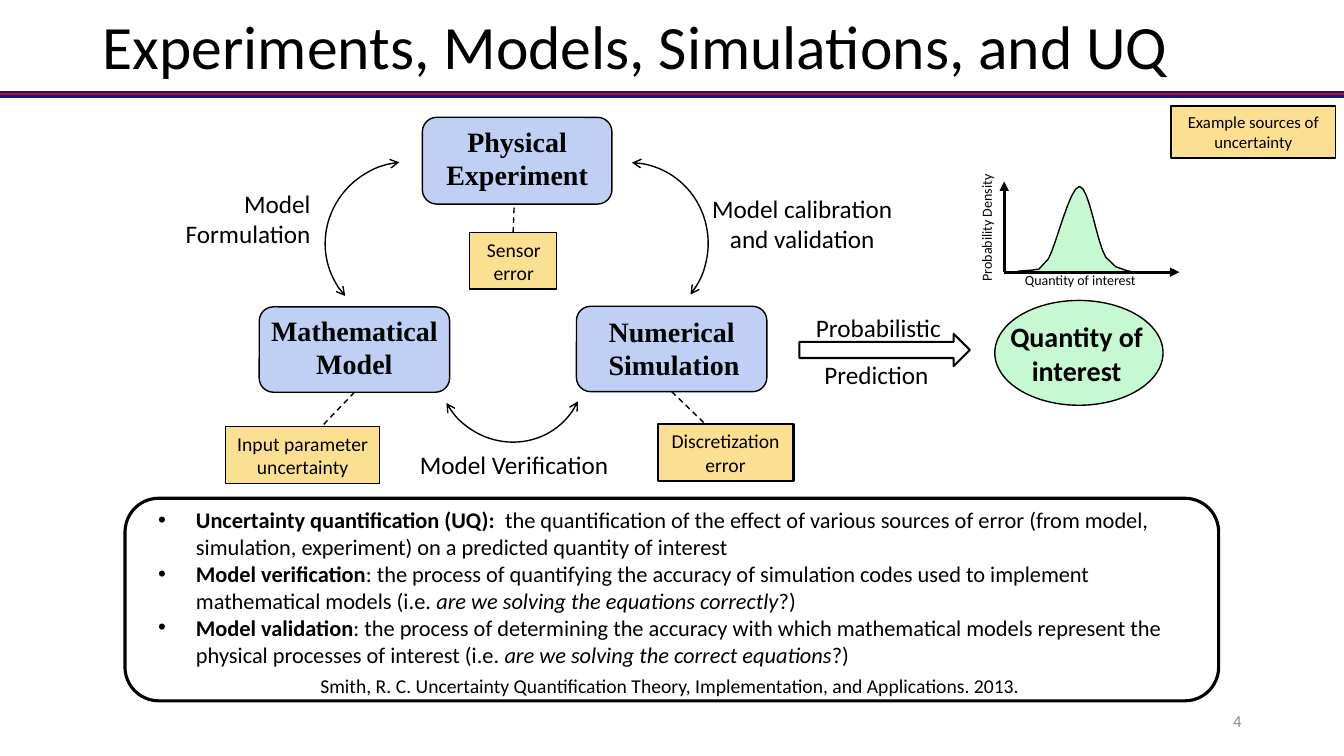
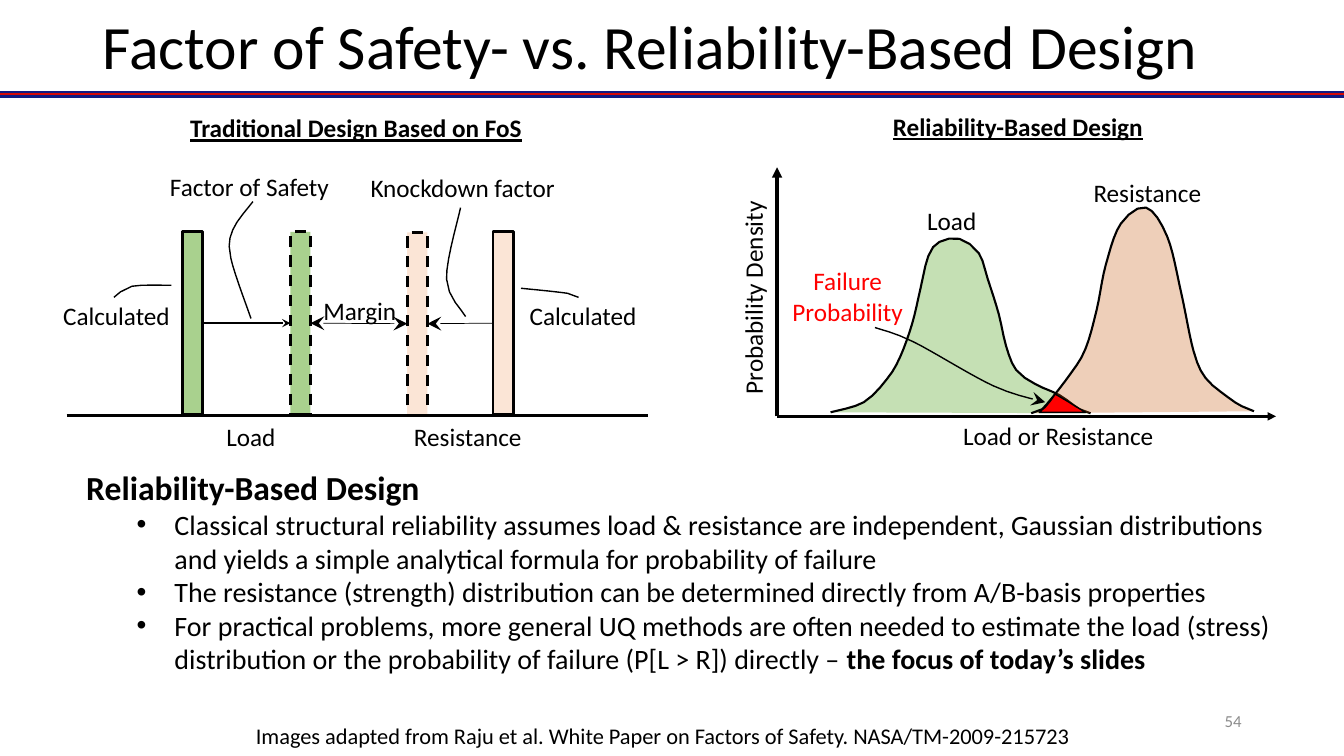
from math import dist

from lxml import etree
from pptx import Presentation
from pptx.dml.color import RGBColor
from pptx.enum.dml import MSO_LINE
from pptx.enum.shapes import MSO_CONNECTOR, MSO_SHAPE
from pptx.enum.text import MSO_ANCHOR, PP_ALIGN
from pptx.oxml.ns import qn
from pptx.util import Pt

LEFT, CENTER, RIGHT = PP_ALIGN.LEFT, PP_ALIGN.CENTER, PP_ALIGN.RIGHT
TOP, MIDDLE = MSO_ANCHOR.TOP, MSO_ANCHOR.MIDDLE
STRAIGHT = MSO_CONNECTOR.STRAIGHT
DASH = MSO_LINE.DASH
RECT, ROUNDED, OVAL = MSO_SHAPE.RECTANGLE, MSO_SHAPE.ROUNDED_RECTANGLE, MSO_SHAPE.OVAL
ARC, RIGHT_ARROW = MSO_SHAPE.ARC, MSO_SHAPE.RIGHT_ARROW
SIDE_TOP, SIDE_LEFT, SIDE_BOTTOM, SIDE_RIGHT = range(4)


class Theme:
    font, serif = "Calibri", "Times New Roman"
    title, heading, large, label, body, note, small, tiny = 44, 24, 20, 18, 16, 14, 12, 10
    black, white, grey, red = "000000", "FFFFFF", "8C8C8C", "FF0000"
    band, band_core = "121981", "D40805"
    blue, yellow, mint = "82A1EB", "FCE092", "8EF4A6"
    green, peach = "A9D18E", "FBE5D6"
    load, resistance = "C5E0B4", "C55A11"


BOLD, ITALIC = {"bold": True}, {"italic": True}


def write(sp, paras, size=Theme.label, align=CENTER, anchor=MIDDLE, color=Theme.black,
          indents=(), spacing=None, inset=0, bottom=0, **font):
    """Fill sp with text; a paragraph is a string or a list of (text, format) runs."""
    tf = sp.text_frame
    frame = {"word_wrap": True, "vertical_anchor": anchor, "margin_left": Pt(inset),
             "margin_right": 0, "margin_top": 0, "margin_bottom": Pt(bottom)}
    for name, value in frame.items():
        setattr(tf, name, value)
    for i, para in enumerate(paras):
        p = tf.add_paragraph() if i else tf.paragraphs[0]
        p.alignment = align
        if spacing:
            p.line_spacing = spacing
        if indents and indents[i]:
            pPr = p._p.get_or_add_pPr()
            pPr.set("marL", str(Pt(indents[i])))
            pPr.set("indent", str(Pt(-27)))
            etree.SubElement(pPr, qn("a:buFont")).set("typeface", "Arial")
            etree.SubElement(pPr, qn("a:buChar")).set("char", "•")
        for text, extra in [(para, {})] if isinstance(para, str) else para:
            r = p.add_run()
            r.text = text
            fmt = {"name": Theme.font, "size": Pt(size), **font, **extra}
            for name, value in fmt.items():
                setattr(r.font, name, value)
            r.font.color.rgb = RGBColor.from_string(color)


def style(sp, fill=None, alpha=None, line=Theme.black, width=1, dash=None, head=None, tail=None):
    """Set fill, outline and arrowheads of a shape or connector, without shadow."""
    sp.line.color.rgb = RGBColor.from_string(line)
    sp.line.width = Pt(width)
    if dash:
        sp.line.dash_style = dash
    ln = sp._element.spPr.find(qn("a:ln"))
    for tag, kind in (("a:headEnd", head), ("a:tailEnd", tail)):
        if kind:
            end = etree.SubElement(ln, qn(tag))
            end.set("type", kind)
            if kind == "stealth" and width < 1.5:
                end.set("w", "lg")
                end.set("len", "lg")
    if not hasattr(sp, "fill"):
        etree.SubElement(sp._element.spPr, qn("a:effectLst"))
        return
    sp.shadow.inherit = False
    if not fill:
        sp.fill.background()
        return
    sp.fill.solid()
    sp.fill.fore_color.rgb = RGBColor.from_string(fill)
    if alpha:
        color = sp._element.spPr.find(qn("a:solidFill"))[0]
        etree.SubElement(color, qn("a:alpha")).set("val", str(alpha * 1000))


prs = Presentation()
prs.slide_width, prs.slide_height = Pt(960), Pt(540)

# Shared band, title and slide number
slides = []
for title, number in (("Experiments, Models, Simulations, and UQ", "4"),
                      ("Factor of Safety- vs. Reliability-Based Design", "54")):
    s = prs.slides.add_slide(prs.slide_layouts[6])
    slides.append(s)
    for color, width in ((Theme.band, 5), (Theme.band_core, 1.5)):
        band = s.shapes.add_connector(STRAIGHT, 0, Pt(67.3), prs.slide_width, Pt(67.3))
        style(band, line=color, width=width)
    sp = s.shapes.add_textbox(Pt(73.4), Pt(0.4), Pt(813.6), Pt(70))
    write(sp, [title], Theme.title, LEFT, spacing=0.9)
    sp = s.shapes.add_textbox(Pt(787), Pt(500), Pt(99.8), Pt(29))
    write(sp, [number], Theme.small, RIGHT, color=Theme.grey)
uq, design = slides

# Filled shapes, back to front: slide, key, preset, box, text, text options, style
blue = {"fill": Theme.blue, "alpha": 50}
yellow = {"fill": Theme.yellow}
serif = {"size": Theme.large, "name": Theme.serif, "bold": True, "bottom": 4}
note = {"size": Theme.note}
shapes = {}
for s, key, preset, box, text, text_opts, look in (
    (uq, "experiment", ROUNDED, (301.7, 83.8, 135.4, 62), "Physical Experiment", serif, blue),
    (uq, "simulation", ROUNDED, (411.8, 218.8, 136, 61), "Numerical Simulation",
     {**serif, "align": LEFT, "inset": 20, "bottom": 1.5}, blue),
    (uq, "model", ROUNDED, (185.2, 219.2, 136, 61), "Mathematical Model", serif, blue),
    (uq, "input", RECT, (161.2, 304.6, 110, 41), "Input parameter uncertainty", note, yellow),
    (uq, "discretization", RECT, (469.8, 303.1, 97, 40.3), "Discretization error", note,
     {**yellow, "width": 1.5}),
    (uq, "sensor", RECT, (335.5, 166.3, 62, 40.3), "Sensor error", {**note, "inset": 1},
     yellow),
    (uq, "legend", RECT, (836.6, 75.6, 117.4, 37.4), "Example sources of uncertainty",
     {"size": Theme.small}, yellow),
    (uq, "quantity", OVAL, (710.6, 214.6, 120.2, 74.9), None, {},
     {"fill": Theme.mint, "alpha": 50}),
    (uq, "prediction", RIGHT_ARROW, (571, 238.5, 121.7, 23), None, {},
     {"fill": Theme.white, "width": 1.5}),
    (uq, "definitions", ROUNDED, (89.3, 355.9, 781.2, 144.7), None, {}, {"width": 2.25}),
    (design, "load", RECT, (130.1, 165.6, 14.4, 130.5), None, {},
     {"fill": Theme.green, "width": 2}),
    (design, "factored load", RECT, (207.4, 165.6, 14.4, 130.5), None, {},
     {"fill": Theme.green, "width": 2, "dash": DASH}),
    (design, "resistance", RECT, (352.2, 165.6, 14.4, 130.5), None, {},
     {"fill": Theme.peach, "width": 2}),
    (design, "reduced resistance", RECT, (290.9, 166, 14.4, 130.5), None, {},
     {"fill": Theme.peach, "width": 2, "dash": DASH}),
):
    sp = shapes[key] = s.shapes.add_shape(preset, *map(Pt, box))
    style(sp, **look)
    if text:
        write(sp, [text], **text_opts)

# Two-way arcs between the three blue boxes
for box, angle in (((233.3, 114.5, 113.8, 116.6), 239.5),
                   ((313.2, 210.4, 103, 106.6), 126.6),
                   ((392, 116.1, 113.8, 116.6), 13.5)):
    sp = uq.shapes.add_shape(ARC, *map(Pt, box))
    sp.adjustments[0], sp.adjustments[1] = 155.375, 15.325
    sp.rotation = angle
    style(sp, head="arrow", tail="arrow")

# Smooth curves through knots: slide, knots, closed with straight sides, style
CHORD = 7
for s, knots, closed, look in (
    (uq, [(727, 193.7), (737, 193), (748.8, 185), (771, 133.2), (789.8, 183.6),
          (809.3, 194.4)], False, {"fill": Theme.mint, "alpha": 50}),
    (design, [(593.3, 294.5), (617, 287.3), (633.6, 270.7), (643, 254.9), (651.6, 231.1),
              (657.4, 206.6), (663.1, 182.9), (671, 172.8), (685.4, 170.6), (699.1, 180.7),
              (705.6, 199.4), (713.5, 224.6), (718.6, 247), (725.8, 264.2), (739.4, 274.3),
              (756.7, 282.2), (771.1, 292.3), (779, 295.2)], False,
     {"fill": Theme.load, "width": 1.5}),
    (design, [(736.6, 295.2), (744.5, 292.3), (764.6, 267.1), (775.4, 249.1), (783.4, 221),
              (789.8, 189.4), (800.6, 159.8), (818.6, 148.3), (833.8, 169.2), (843.8, 209.5),
              (852.5, 250.6), (861.1, 270), (877, 283.7), (887, 290.2), (895.7, 293.8)], False,
     {"fill": Theme.resistance, "alpha": 29, "width": 1.5}),
    (design, [(742.3, 294.5), (746.6, 290.9), (750.2, 286.6), (753.8, 281.5), (762.5, 286.6),
              (768.2, 290.2), (775.4, 294.5)], True, {"fill": Theme.red}),
    (design, [(179.3, 227.5), (164.9, 184.3), (166.3, 164.2), (180.7, 144)], False, {}),
    (design, [(332.6, 226.1), (319, 199.4), (329, 148.3)], False, {}),
    (design, [(413.3, 212.4), (405.4, 209.5), (372.2, 205.9)], False, {}),
    (design, [(81.4, 212.4), (94.3, 204.5), (122.4, 203.8)], False, {}),
    (design, [(625, 234), (652.3, 244.1), (709.9, 275.8), (746.6, 287.3)], False,
     {"tail": "stealth"}),
):
    points = knots[1:]
    if not closed:
        padded = [knots[0], *knots, knots[-1]]
        points = []
        for quad in zip(padded, padded[1:], padded[2:], padded[3:]):
            steps = max(1, round(dist(quad[1], quad[2]) / CHORD))
            for t in (step / steps for step in range(1, steps + 1)):
                points.append(tuple(
                    b + t * (c - a) / 2 + t ** 2 * (2 * a - 5 * b + 4 * c - d) / 2
                    + t ** 3 * (3 * b - a - 3 * c + d) / 2
                    for a, b, c, d in zip(*quad)))
    builder = s.shapes.build_freeform(*map(Pt, knots[0]))
    builder.add_line_segments([(Pt(x), Pt(y)) for x, y in points], close=closed)
    style(builder.convert_to_shape(), **look)

# Axes, base line and links; a joined end names a shape and its side
for s, ends, begin, end, look in (
    (uq, (717.3, 194.4, 842.4, 194.4), None, None, {"width": 2.25, "tail": "triangle"}),
    (uq, (717.3, 194.4, 717.3, 129.6), None, None, {"width": 2.25, "tail": "triangle"}),
    (uq, (367.2, 148.3, 366.5, 166.3), None, ("sensor", SIDE_TOP), {"dash": DASH}),
    (uq, (253.2, 280.2, 230.4, 304), ("model", SIDE_BOTTOM), None, {"dash": DASH}),
    (uq, (479.8, 279.8, 503.3, 302.4), ("simulation", SIDE_BOTTOM), None, {"dash": DASH}),
    (design, (47.7, 296.6, 463, 296.6), None, None, {"width": 2}),
    (design, (555.1, 297.4, 911.5, 297.4), None, None, {"width": 2, "tail": "triangle"}),
    (design, (555.1, 297.4, 555.1, 119.5), None, None, {"width": 2.5, "tail": "triangle"}),
    (design, (144.5, 230.9, 207.4, 230.9), ("load", SIDE_RIGHT), ("factored load", SIDE_LEFT),
     {"width": 1.5, "tail": "stealth"}),
    (design, (221.8, 230.9, 290.9, 231.3), ("factored load", SIDE_RIGHT),
     ("reduced resistance", SIDE_LEFT), {"width": 0.5, "head": "stealth", "tail": "stealth"}),
    (design, (352.2, 230.9, 305.3, 231.3), ("resistance", SIDE_LEFT),
     ("reduced resistance", SIDE_RIGHT), {"width": 0.5, "tail": "stealth"}),
):
    link = s.shapes.add_connector(STRAIGHT, *map(Pt, ends))
    if begin:
        link.begin_connect(shapes[begin[0]], begin[1])
    if end:
        link.end_connect(shapes[end[0]], end[1])
    style(link, **look)

# Labels: slide, box, text, rotation, text options
left = {"align": LEFT, "inset": 7.2}
tiny = {**left, "size": Theme.tiny}
heading = {**left, "bold": True, "underline": True}
for s, box, text, angle, text_opts in (
    (uq, (288, 317.5, 158.4, 28.8), "Model Verification", 0, {}),
    (uq, (504.5, 134, 137, 51), "Model calibration and validation", 0, {}),
    (uq, (115, 130.4, 106.8, 51), "Model Formulation", 0, {"align": RIGHT}),
    (uq, (717, 224.8, 104, 55.4), "Quantity of interest", 0, {"size": Theme.large, **BOLD}),
    (uq, (568.8, 253, 114.5, 28.8), "Prediction", 0, {}),
    (uq, (565.5, 219.6, 123.8, 28.8), "Probabilistic", 0, {}),
    (uq, (212.9, 477.6, 531.4, 24.5),
     "Smith, R. C. Uncertainty Quantification Theory, Implementation, and Applications. 2013.",
     0, note),
    (uq, (658.8, 152.6, 91.4, 19.4), "Probability Density", 270, tiny),
    (uq, (725, 190.6, 95, 19.4), "Quantity of interest", 0, tiny),
    (design, (175.7, 512.2, 603.4, 26.6),
     "Images adapted from Raju et al. White Paper on Factors of Safety. NASA/TM-2009-215723",
     0, {**left, "size": Theme.body}),
    (design, (114.3, 119, 129.6, 28.8), "Factor of Safety", 0, left),
    (design, (257.6, 119.5, 147.6, 28.8), "Knockdown factor", 0, left),
    (design, (154.6, 297.4, 50.4, 28.8), "Load", 0, left),
    (design, (288.6, 297.4, 92.2, 28.8), "Resistance", 0, left),
    (design, (223.9, 207.4, 67, 28.8), "Margin", 0, left),
    (design, (38, 211, 91.4, 28.8), "Calculated", 0, left),
    (design, (371.3, 211, 91.4, 28.8), "Calculated", 0, left),
    (design, (128.7, 77, 253.4, 28.8), "Traditional Design Based on FoS", 0, heading),
    (design, (630.7, 75.8, 194.4, 28.8), "Reliability-Based Design", 0, heading),
    (design, (460.8, 197.3, 154, 28.8), "Probability Density", 270, left),
    (design, (680.8, 296.4, 151.9, 28.8), "Load or Resistance", 0, left),
    (design, (655.2, 143.3, 50.4, 28.8), "Load", 0, left),
    (design, (774, 123.1, 92.2, 28.8), "Resistance", 0, left),
    (design, (553.3, 185.8, 104.4, 51), "Failure Probability", 0, {"color": Theme.red}),
):
    sp = s.shapes.add_textbox(*map(Pt, box))
    if angle:
        sp.rotation = angle
    write(sp, [text], **text_opts)

sp = uq.shapes.add_textbox(Pt(113), Pt(361.7), Pt(731.5), Pt(121))
write(sp, [
    [("Uncertainty quantification (UQ):  ", BOLD),
     ("the quantification of the effect of various sources of error (from model, simulation, "
      "experiment) on a predicted quantity of interest", {})],
    [("Model verification", BOLD),
     (": the process of quantifying the accuracy of simulation codes used to implement "
      "mathematical models (i.e. ", {}),
     ("are we solving the equations correctly", ITALIC), ("?)", {})],
    [("Model validation", BOLD),
     (": the process of determining the accuracy with which mathematical models represent the "
      "physical processes of interest (i.e. ", {}),
     ("are we solving the correct equations", ITALIC), ("?)", {})],
], Theme.body, LEFT, TOP, indents=(27, 27, 27))

sp = design.shapes.add_textbox(Pt(61.6), Pt(333.6), Pt(853.2), Pt(151))
write(sp, [
    [("Reliability-Based Design", {"size": Pt(Theme.heading), **BOLD})],
    "Classical structural reliability assumes load & resistance are independent, Gaussian "
    "distributions and yields a simple analytical formula for probability of failure",
    "The resistance (strength) distribution can be determined directly from A/B-basis properties",
    [("For practical problems, more general UQ methods are often needed to estimate the load "
      "(stress) distribution or the probability of failure (P[L > R]) directly – ", {}),
     ("the focus of today’s slides", BOLD)],
], Theme.large, LEFT, TOP, indents=(0, 63, 63, 63))

prs.save("out.pptx")
